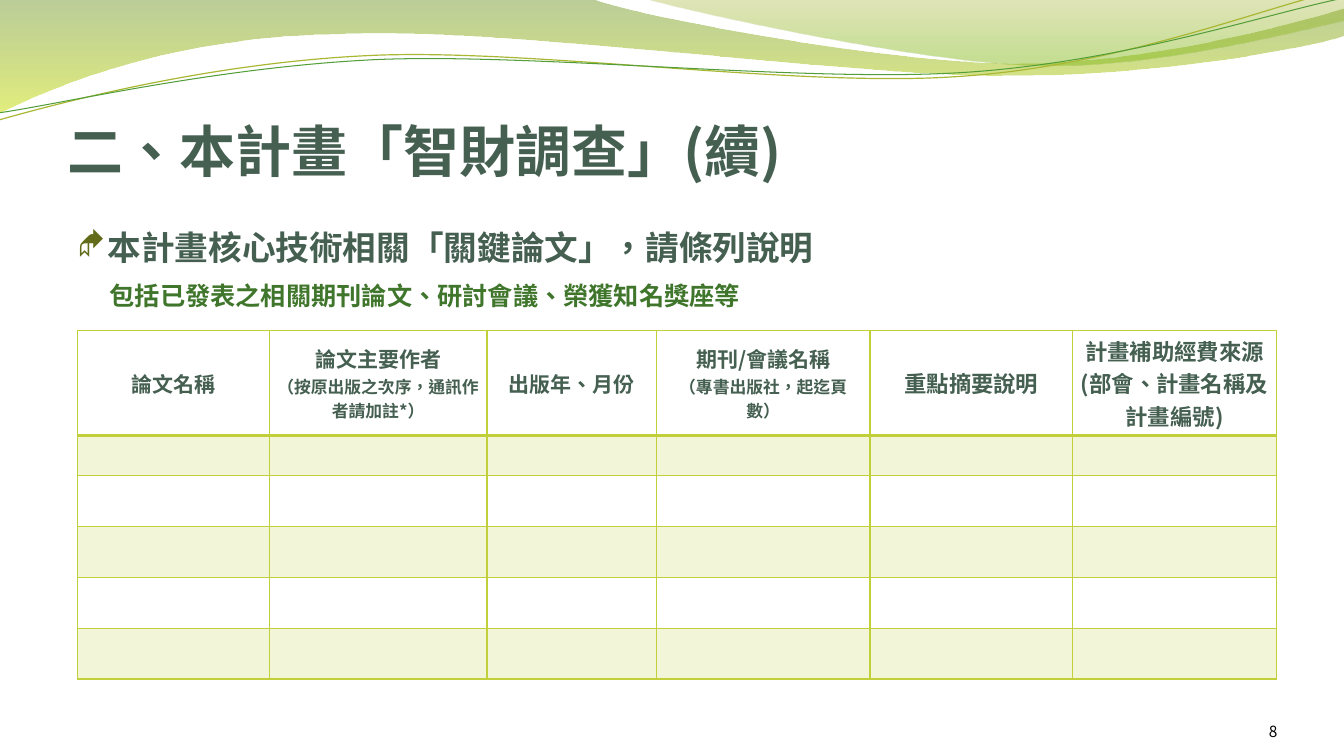
import math

from lxml import etree
from pptx import Presentation
from pptx import util as u
from pptx.dml.color import RGBColor
from pptx.enum import lang, text
from pptx.oxml import ns

SLATE = RGBColor(0x45, 0x5F, 0x51)
FOREST = RGBColor(0x3F, 0x76, 0x2B)
BLACK = RGBColor(0, 0, 0)
LIME = RGBColor(0xC0, 0xCF, 0x3A)
OLIVE = RGBColor(0x62, 0x6B, 0x1A)
GOLD = RGBColor(0xA9, 0xB7, 0x33)
GREEN = RGBColor(0x54, 0x9E, 0x39)
MOSS = RGBColor(0x69, 0x92, 0x1C)
YELLOW = RGBColor(0xCC, 0xE1, 0x0F)
KHAKI = RGBColor(0x9B, 0xAA, 0x1A)
LEAF = RGBColor(0x81, 0xBA, 0x16)

COLUMNS, ROWS = 133.3, 75


def add_xml(parent, tag, **attributes):
    return etree.SubElement(parent, ns.qn(tag), attributes)


def add_color(parent, color, opacity=100):
    swatch = add_xml(parent, "a:srgbClr", val=str(color))
    if opacity < 100:
        add_xml(swatch, "a:alpha", val=str(opacity * 1000))


class Deck:
    font = "Noto Sans CJK SC"

    def __init__(self):
        self.file = Presentation()
        self.file.slide_width, self.file.slide_height = u.Inches(13.33), u.Inches(7.5)
        self.slide = self.file.slides.add_slide(self.file.slide_layouts[5])

    def x(self, columns):
        return round(self.file.slide_width * columns / COLUMNS)

    def y(self, rows):
        return round(self.file.slide_height * rows / ROWS)

    def place(self, shape, left, top, width, height):
        shape.left, shape.top = self.x(left), self.y(top)
        shape.width, shape.height = self.x(width), self.y(height)

    def style(self, paragraph, size, color, bold=True, align=text.PP_ALIGN.LEFT, font=None):
        paragraph.alignment = align
        paragraph.font.size, paragraph.font.bold = u.Pt(size), bold
        paragraph.font.color.rgb = color
        paragraph.font.name = font or self.font
        add_xml(paragraph.font._element, "a:ea", typeface=font or self.font)
        for run in paragraph.runs:
            run.font.language_id = lang.MSO_LANGUAGE_ID.TRADITIONAL_CHINESE

    def frame(self, shape, wording, anchor, insets=(0.1, 0.05, 0.1, 0.05)):
        frame = shape.text_frame
        frame.word_wrap, frame.auto_size = True, text.MSO_AUTO_SIZE.NONE
        frame.vertical_anchor = anchor
        (frame.margin_left, frame.margin_top,
         frame.margin_right, frame.margin_bottom) = map(u.Inches, insets)
        frame.text = wording
        return frame.paragraphs[0]

    def title(self, wording, box):
        heading = self.slide.shapes.title
        self.place(heading, *box)
        self.style(self.frame(heading, wording, text.MSO_ANCHOR.BOTTOM, (0, 0.05, 0, 0)), 40, SLATE)

    def text(self, wording, box, size, color, spacing=None, anchor=text.MSO_ANCHOR.TOP,
             insets=(0.1, 0.05, 0.1, 0.05), **look):
        label = self.slide.shapes.add_textbox(0, 0, 0, 0)
        self.place(label, *box)
        paragraph = self.frame(label, wording, anchor, insets)
        if spacing:
            paragraph.line_spacing = spacing
        self.style(paragraph, size, color, **look)
        return paragraph

    def bullet(self, wording, box, size, color):
        paragraph = self.text(wording, box, size, color, spacing=1.5)
        paragraph.space_before = u.Pt(5)
        properties = paragraph._p.get_or_add_pPr()
        properties.set("marL", str(u.Inches(0.3)))
        properties.set("indent", str(-u.Inches(0.3)))
        defaults = properties.find(ns.qn("a:defRPr"))
        add_color(add_xml(properties, "a:buClr"), OLIVE)
        add_xml(properties, "a:buSzPct", val="95000")
        add_xml(properties, "a:buFont", typeface="Wingdings", charset="2")
        add_xml(properties, "a:buChar", char="◆")
        properties.append(defaults)

    def outline(self, box, segments, close=False, tilt=0):
        left, top, width, height = box
        middle = left + width / 2, top + height / 2
        cos, sin = math.cos(math.radians(tilt)), math.sin(math.radians(tilt))

        def local(point):
            across, down = point[0] - middle[0], point[1] - middle[1]
            return (self.x(across * cos + down * sin + width / 2),
                    self.y(down * cos - across * sin + height / 2))

        ends = [local(segment[-1]) for segment in segments]
        builder = self.slide.shapes.build_freeform(*ends[0])
        builder.add_line_segments(ends[1:], close=close)
        shape = builder.convert_to_shape()
        self.place(shape, *box)
        shape.rotation = tilt
        shape.shadow.inherit = False
        track = shape._element.spPr.find(".//" + ns.qn("a:path"))
        track.set("w", str(self.x(width)))
        track.set("h", str(self.y(height)))
        for old in list(track):
            track.remove(old)
        for index, segment in enumerate(segments):
            tag = "a:cubicBezTo" if len(segment) == 3 else "a:lnTo" if index else "a:moveTo"
            step = add_xml(track, tag)
            for across, down in map(local, segment):
                add_xml(step, "a:pt", x=str(across), y=str(down))
        if close:
            add_xml(track, "a:close")
        return shape

    def wave(self, box, segments, stops):
        shape = self.outline(box, segments, close=True)
        shape.line.fill.background()
        shape.fill.gradient()
        shape.fill.gradient_angle = 270
        stop_list = shape._element.spPr.find(".//" + ns.qn("a:gsLst"))
        for old in list(stop_list):
            stop_list.remove(old)
        for position, color, opacity in stops:
            add_color(add_xml(stop_list, "a:gs", pos=str(position * 1000)), color, opacity)

    def strand(self, box, segments, color, width):
        shape = self.outline(box, segments, tilt=-2.7)
        shape.fill.background()
        shape.line.color.rgb, shape.line.width = color, u.Pt(width)

    def borders(self, cell, bottom):
        properties = cell._tc.get_or_add_tcPr()
        for side, width in (("L", 1), ("R", 1), ("T", 1), ("B", bottom)):
            line = add_xml(properties, "a:ln" + side, w=str(u.Pt(width)))
            add_color(add_xml(line, "a:solidFill"), LIME)

    def table(self, left, top, widths, heights, headers):
        table = self.slide.shapes.add_table(
            len(heights), len(widths), self.x(left), self.y(top),
            self.x(sum(widths)), self.y(sum(heights))).table
        table.first_row = table.horz_banding = False
        for column, width in zip(table.columns, widths):
            column.width = self.x(width)
        for index, (row, height) in enumerate(zip(table.rows, heights)):
            row.height = self.y(height)
            for cell in row.cells:
                cell.margin_left = cell.margin_right = u.Inches(0.07)
                cell.margin_top = cell.margin_bottom = u.Inches(0.04)
                self.borders(cell, 1 if index else 2)
                if index % 2:
                    cell.fill.solid()
                    cell.fill.fore_color.rgb = LIME
                    swatch = cell._tc.tcPr.find(ns.qn("a:solidFill"))[0]
                    add_xml(swatch, "a:alpha", val="20000")
                else:
                    cell.fill.background()
        for cell, lines in zip(table.rows[0].cells, headers):
            cell.vertical_anchor = text.MSO_ANCHOR.MIDDLE
            cell.text = "\n".join(wording for wording, size in lines)
            for paragraph, (wording, size) in zip(cell.text_frame.paragraphs, lines):
                self.style(paragraph, size, SLATE, align=text.PP_ALIGN.CENTER)


def main():
    deck = Deck()
    deck.wave((-0.2, -0.1, 133.6, 11.4),
              [[(0, 0)], [(58.7, -0.1)],
               [(63.4, 1.7), (88.4, 6.3), (101.1, 6.3)],
               [(113.7, 6.3), (127.7, 2.6), (133.3, 0.9)], [(133.4, 3.6)],
               [(131.1, 4.4), (115.9, 7.6), (99.4, 7.5)],
               [(82.9, 7.5), (50.9, 2.8), (34.3, 3.4)],
               [(17.2, 3.6), (6.1, 8.3), (-0.2, 11.3)], [(0, 0)]],
              [(0, MOSS, 45), (100, YELLOW, 55)])
    deck.wave((63.8, -0.1, 69.4, 7),
              [[(63.8, -0.1)],
               [(67.9, 1.1), (90.9, 6.2), (102.5, 6.5)],
               [(114, 6.9), (128.2, 3.2), (133.3, 2.1)], [(133.3, 0)], [(63.8, -0.1)]],
              [(0, KHAKI, 30), (80, LEAF, 45)])
    deck.strand((-0.3, 2.2, 133.6, 7.1),
                [[(-0.1, 11.9)],
                 [(6.3, 10.1), (21, 6.2), (36.9, 5.5)],
                 [(52.7, 4.8), (78.9, 8.7), (94.9, 7.6)],
                 [(111, 6.6), (125.1, 0.8), (133, -1)]], GOLD, 0.85)
    deck.strand((-0.2, 3, 133.8, 5.8),
                [[(-0.1, 11.2)],
                 [(6.2, 10.3), (21.8, 6.6), (37.7, 5.9)],
                 [(53.7, 5.3), (79.6, 8.2), (95.5, 7.2)],
                 [(111.4, 6.2), (125.5, 1.4), (133.3, -0.2)]], GREEN, 0.75)

    deck.title("二、本計畫「智財調查」(續)", (6.7, 5.7, 120, 12.5))
    deck.bullet("本計畫核心技術相關「關鍵論文」，請條列說明", (6.7, 20, 122.3, 7.5), 24, SLATE)
    deck.table(7.7, 32.8, [19, 21.6, 16.8, 21.2, 20.1, 20.2], [10.2, 4] + [5.04] * 4, [
        [("論文名稱", 15)],
        [("論文主要作者", 15), ("（按原出版之次序，通訊作者請加註*）", 12)],
        [("出版年、月份", 15)],
        [("期刊/會議名稱", 15), ("（專書出版社，起迄頁數）", 12)],
        [("重點摘要說明", 16)],
        [("計畫補助經費來源", 16), ("(部會、計畫名稱及計畫編號)", 16)],
    ])
    deck.text("8", (115.6, 69.5, 11.1, 4), 11, BLACK, anchor=text.MSO_ANCHOR.BOTTOM,
              insets=(0, 0, 0, 0), bold=False, align=text.PP_ALIGN.RIGHT, font="Noto Sans CJK TC")
    deck.text("包括已發表之相關期刊論文、研討會議、榮獲知名獎座等",
              (9.9, 25.8, 115.8, 5.6), 18, FOREST, spacing=1.5)
    deck.file.save("out.pptx")


if __name__ == "__main__":
    main()
